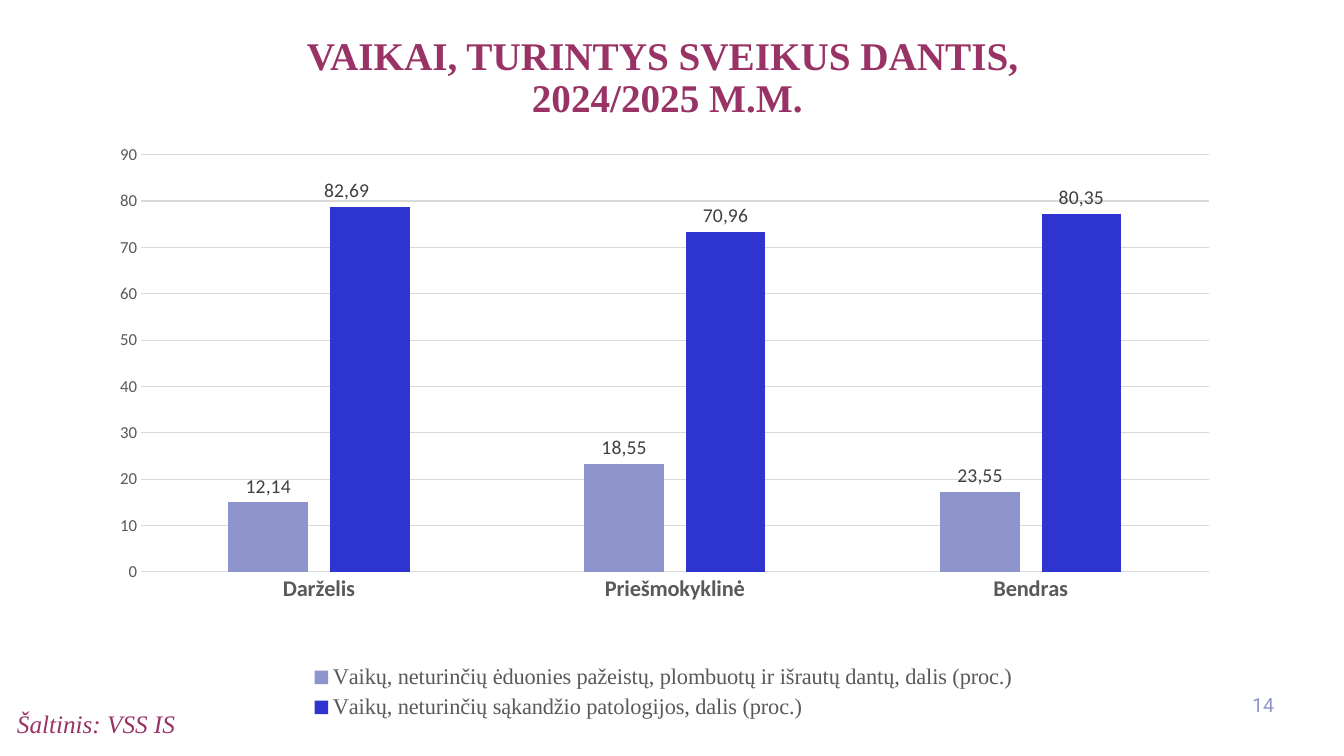
from dataclasses import dataclass

from lxml import etree
from pptx import Presentation
from pptx.chart.chart import Chart
from pptx.chart.data import CategoryChartData
from pptx.dml.color import RGBColor
from pptx.enum.chart import XL_CHART_TYPE, XL_LABEL_POSITION, XL_LEGEND_POSITION, XL_TICK_MARK
from pptx.enum.text import MSO_ANCHOR, PP_ALIGN
from pptx.oxml.ns import qn
from pptx.slide import Slide
from pptx.text.text import Font
from pptx.util import Pt

CLUSTERED = XL_CHART_TYPE.COLUMN_CLUSTERED
OUTSIDE_END = XL_LABEL_POSITION.OUTSIDE_END
LEGEND_BOTTOM = XL_LEGEND_POSITION.BOTTOM
NO_TICK = XL_TICK_MARK.NONE
LEFT, CENTER, RIGHT = PP_ALIGN.LEFT, PP_ALIGN.CENTER, PP_ALIGN.RIGHT
TOP, MIDDLE = MSO_ANCHOR.TOP, MSO_ANCHOR.MIDDLE

COLORS = {
    "plum": "993366",
    "lavender": "8D95CC",
    "number": "8E96CD",
    "blue": "2E34D0",
    "label": "404040",
    "axis": "595959",
    "grid": "D9D9D9",
    "black": "000000",
}
SERIF, SANS, NUMBER_FONT = "Times New Roman", "Calibri", "Roboto"
CATEGORIES = ["Darželis", "Priešmokyklinė", "Bendras"]


@dataclass
class Caption:
    text: str
    box: tuple[float, float, float, float]
    font: str
    size: float
    color: str
    align: PP_ALIGN = LEFT
    anchor: MSO_ANCHOR = TOP
    bold: bool = False
    italic: bool = False
    line_spacing: float = 1.0


@dataclass
class ToothSeries:
    name: str
    values: list[float]
    labels: list[str]
    color: str


CAPTIONS = [
    Caption("VAIKAI, TURINTYS SVEIKUS DANTIS, \v2024/2025 M.M.", (-6.48, 22.32, 966.24, 85.68),
            SERIF, 28, "plum", CENTER, bold=True, line_spacing=0.9),
    Caption("Šaltinis: VSS IS", (5.04, 502.56, 453.6, 27.36), SERIF, 18, "plum", italic=True),
    Caption("14", (879.84, 488.88, 37.44, 28.8), NUMBER_FONT, 14, "number", RIGHT, MIDDLE),
]
TOOTH_SERIES = [
    ToothSeries("Vaikų, neturinčių ėduonies pažeistų, plombuotų ir išrautų dantų, dalis (proc.)",
                [15, 23.33, 17.27], ["12,14", "18,55", "23,55"], "lavender"),
    ToothSeries("Vaikų, neturinčių sąkandžio patologijos, dalis (proc.)",
                [78.75, 73.33, 77.27], ["82,69", "70,96", "80,35"], "blue"),
]


def rgb(name: str) -> RGBColor:
    return RGBColor.from_string(COLORS[name])


def style_font(font: Font, name: str, size: float, color: str,
               bold: bool = False, italic: bool = False) -> None:
    font.name, font.size, font.bold, font.italic = name, Pt(size), bold, italic
    font.color.rgb = rgb(color)


def add_caption(slide: Slide, caption: Caption) -> None:
    shape = slide.shapes.add_textbox(*map(Pt, caption.box))
    text_frame = shape.text_frame
    text_frame.word_wrap = True
    text_frame.vertical_anchor = caption.anchor
    paragraph = text_frame.paragraphs[0]
    paragraph.text = caption.text
    paragraph.alignment = caption.align
    paragraph.line_spacing = caption.line_spacing
    for run in paragraph.runs:
        style_font(run.font, caption.font, caption.size, caption.color,
                   caption.bold, caption.italic)


def set_layout(parent: etree._Element, index: int, **settings: str | float) -> None:
    for layout in parent.findall(qn("c:layout")):
        parent.remove(layout)
    layout = etree.Element(qn("c:layout"))
    manual = etree.SubElement(layout, qn("c:manualLayout"))
    for name, value in settings.items():
        etree.SubElement(manual, qn(f"c:{name}")).set("val", str(value))
    parent.insert(index, layout)


def style_axes(chart: Chart) -> None:
    category_axis, value_axis = chart.category_axis, chart.value_axis
    for axis, size, bold in ((category_axis, 16, True), (value_axis, 12, False)):
        axis.major_tick_mark = axis.minor_tick_mark = NO_TICK
        style_font(axis.tick_labels.font, SANS, size, "axis", bold)
    value_axis.minimum_scale, value_axis.maximum_scale, value_axis.major_unit = 0, 90, 10
    value_axis.format.line.fill.background()
    for line in (category_axis.format.line, value_axis.major_gridlines.format.line):
        line.color.rgb = rgb("grid")
        line.width = Pt(0.75)


def style_series(chart: Chart) -> None:
    plot = chart.plots[0]
    plot.gap_width, plot.overlap, plot.vary_by_categories = 219, -27, False
    for series, tooth_series in zip(plot.series, TOOTH_SERIES):
        series.format.fill.solid()
        series.format.fill.fore_color.rgb = rgb(tooth_series.color)
        labels = series.data_labels
        labels.show_value = True
        labels.position = OUTSIDE_END
        style_font(labels.font, SANS, 14, "label", True)
        for index, text in enumerate(tooth_series.labels):
            label = series.points[index].data_label
            label.text_frame.text = text
            label.position = OUTSIDE_END
            style_font(label.text_frame.paragraphs[0].runs[0].font, SANS, 14, "label")


def add_teeth_chart(slide: Slide) -> None:
    data = CategoryChartData()
    data.categories = CATEGORIES
    for tooth_series in TOOTH_SERIES:
        data.add_series(tooth_series.name, tooth_series.values)
    chart = slide.shapes.add_chart(
        CLUSTERED, Pt(59.76), Pt(97.92), Pt(820.08), Pt(419.76), data).chart
    chart.has_title = False
    style_font(chart.font, SANS, 10, "black")
    style_axes(chart)
    style_series(chart)
    chart.has_legend = True
    chart.legend.position = LEGEND_BOTTOM
    chart.legend.include_in_layout = False
    style_font(chart.legend.font, SERIF, 16, "axis")

    plot_area = chart.element.find(".//" + qn("c:plotArea"))
    shifted_label = plot_area.findall(".//" + qn("c:ser"))[1].find(".//" + qn("c:dLbl"))
    set_layout(plot_area, 0, layoutTarget="inner", xMode="edge", yMode="edge",
               x=0.05, y=0.03, w=0.93, h=0.71)
    set_layout(chart.legend.element if hasattr(chart.legend, "element")
               else chart.element.find(".//" + qn("c:legend")), 1,
               xMode="edge", yMode="edge", x=0.19, y=0.89, w=0.63, h=0.11)
    set_layout(shifted_label, 1, x=-0.02, y=0)


def main() -> None:
    """Build the slide on children's healthy teeth."""
    presentation = Presentation()
    presentation.slide_width, presentation.slide_height = Pt(960), Pt(540)
    slide = presentation.slides.add_slide(presentation.slide_layouts[6])
    add_teeth_chart(slide)
    for caption in CAPTIONS:
        add_caption(slide, caption)
    presentation.save("out.pptx")


if __name__ == "__main__":
    main()
